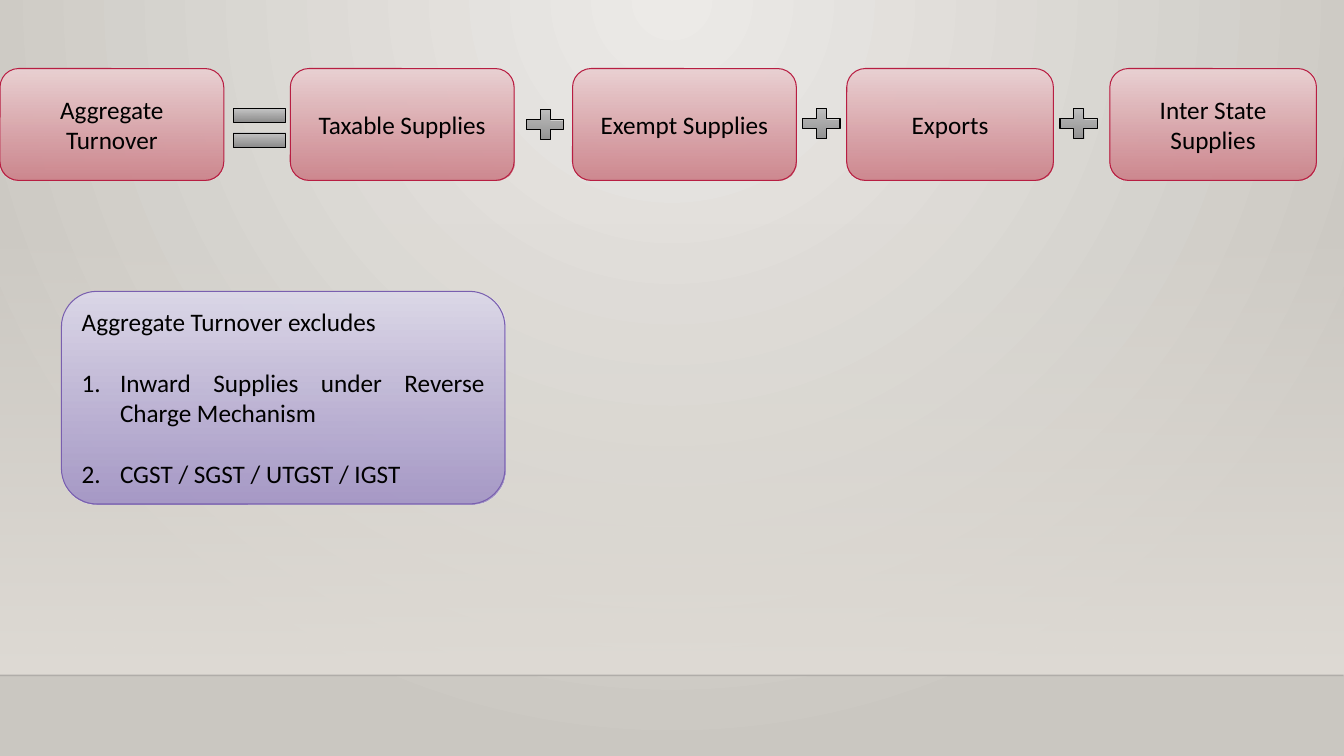
"""Builds the aggregate turnover slide."""
import pptx
import pptx.dml.color
import pptx.enum.shapes
import pptx.enum.text
import pptx.oxml
import pptx.oxml.ns
import pptx.util

PX = 9144
FONT = "Calibri"
SHAPE = pptx.enum.shapes.MSO_SHAPE
ALIGN = pptx.enum.text.PP_ALIGN
NS = pptx.oxml.ns.nsdecls("a")

COLORS = {
    "bg_top": "ECEAE7", "bg_edge": "CAC7C1", "floor": "DFDBD5",
    "floor_line": "000001", "text": "000000",
    "term_top": "EAD1D3", "term_bottom": "CD828A", "term_line": "B71E42",
    "sign_top": "C8C8C8", "sign_bottom": "848484", "sign_line": "000000",
    "note_top": "DCD8E8", "note_bottom": "A395C6", "note_line": "795FAF",
}


def px(n):
    """Turn px into EMU."""
    return pptx.util.Emu(n * PX)


def rgb(name):
    """Look up a named colour."""
    return pptx.dml.color.RGBColor.from_string(COLORS[name])


def set_alpha(clr, percent):
    """Give a colour element an opacity."""
    clr.append(pptx.oxml.parse_xml(f'<a:alpha {NS} val="{percent * 1000}"/>'))


def set_gradient(fill, *names):
    """Fill with a gradient through two named colours."""
    fill.gradient()
    for stop, name in zip(fill.gradient_stops, names):
        stop.color.rgb = rgb(name)


def add_background(s):
    """Give the slide a radial background lit from the top."""
    set_gradient(s.background.fill, "bg_top", "bg_edge")
    grad = s._element.xpath(".//p:bg//a:gradFill")[0]
    lin = grad.xpath("a:lin")[0]
    grad.replace(lin, pptx.oxml.parse_xml(
        f'<a:path {NS} path="circle">'
        '<a:fillToRect l="43000" t="0" r="43000" b="100000"/></a:path>'))


def add_box(s, kind, box, top, bottom, line=None, alphas=(100, 92)):
    """Add a preset shape with a vertical gradient."""
    sp = s.shapes.add_shape(kind, *map(px, box))
    sp.shadow.inherit = False
    set_gradient(sp.fill, top, bottom)
    sp.fill.gradient_angle = 270
    for clr, alpha in zip(sp._element.xpath(".//a:gs/a:srgbClr"), alphas):
        set_alpha(clr, alpha)
    if line:
        sp.line.color.rgb = rgb(line)
        sp.line.width = pptx.util.Pt(0.75)
    else:
        sp.line.fill.background()
    return sp


def add_text(p, text, size=18, color="text", align=ALIGN.CENTER, before=0, numbered=False):
    """Write formatted text into a paragraph."""
    if numbered:
        pPr = p._p.get_or_add_pPr()
        pPr.set("marL", str(px(38)))
        pPr.set("indent", str(-px(38)))
        pPr.append(pptx.oxml.parse_xml(f'<a:buAutoNum {NS} type="arabicPeriod"/>'))
    p.alignment = align
    if before:
        p.space_before = pptx.util.Pt(before)
    r = p.add_run()
    r.text = text
    r.font.name = FONT
    r.font.size = pptx.util.Pt(size)
    r.font.color.rgb = rgb(color)


def add_floor(s):
    """Add the fading wall and the line where it meets the floor."""
    add_box(s, SHAPE.RECTANGLE, (0, 221, 1333, 449), "floor", "floor", alphas=(0, 100))
    cn = s.shapes.add_connector(pptx.enum.shapes.MSO_CONNECTOR.STRAIGHT,
                                0, px(670), px(1333), px(670))
    cn.line.color.rgb = rgb("floor_line")
    cn.line.width = pptx.util.Pt(1)
    set_alpha(cn._element.xpath(".//a:ln//a:srgbClr")[0], 20)
    cn._element.spPr.append(pptx.oxml.parse_xml(f"<a:effectLst {NS}/>"))


def add_term(s, left, width, text):
    """Add one term of the sum."""
    sp = add_box(s, SHAPE.ROUNDED_RECTANGLE, (left, 68, width, 111),
                 "term_top", "term_bottom", "term_line")
    add_text(sp.text_frame.paragraphs[0], text)


def add_sign(s, kind, *box):
    """Add a grey operator shape."""
    add_box(s, kind, box, "sign_top", "sign_bottom", "sign_line")


def add_note(s, heading, items):
    """Add the panel with a heading and a numbered list."""
    sp = add_box(s, SHAPE.ROUNDED_RECTANGLE, (61, 289, 440, 211),
                 "note_top", "note_bottom", "note_line")
    tf = sp.text_frame
    add_text(tf.paragraphs[0], heading, align=ALIGN.JUSTIFY)
    for item in items:
        add_text(tf.add_paragraph(), item, align=ALIGN.JUSTIFY, before=22, numbered=True)


def main():
    """Build and save the slide."""
    prs = pptx.Presentation()
    prs.slide_width, prs.slide_height = pptx.util.Inches(13.333), px(750)
    s = prs.slides.add_slide(prs.slide_layouts[6])
    add_background(s)
    add_floor(s)
    for left, width, text in (
            (0, 222, "Aggregate Turnover"), (288, 222, "Taxable Supplies"),
            (568, 222, "Exempt Supplies"), (840, 205, "Exports"),
            (1101, 205, "Inter State Supplies")):
        add_term(s, left, width, text)
    for top in (108, 132):
        add_sign(s, SHAPE.RECTANGLE, 232, top, 51, 14)
    for left, top in ((516, 103), (790, 102), (1045, 102)):
        add_sign(s, SHAPE.MATH_PLUS, left, top, 50, 41)
    add_note(s, "Aggregate Turnover excludes",
             ("Inward Supplies under Reverse Charge Mechanism",
              "CGST / SGST / UTGST / IGST"))
    prs.save("out.pptx")


if __name__ == "__main__":
    main()
